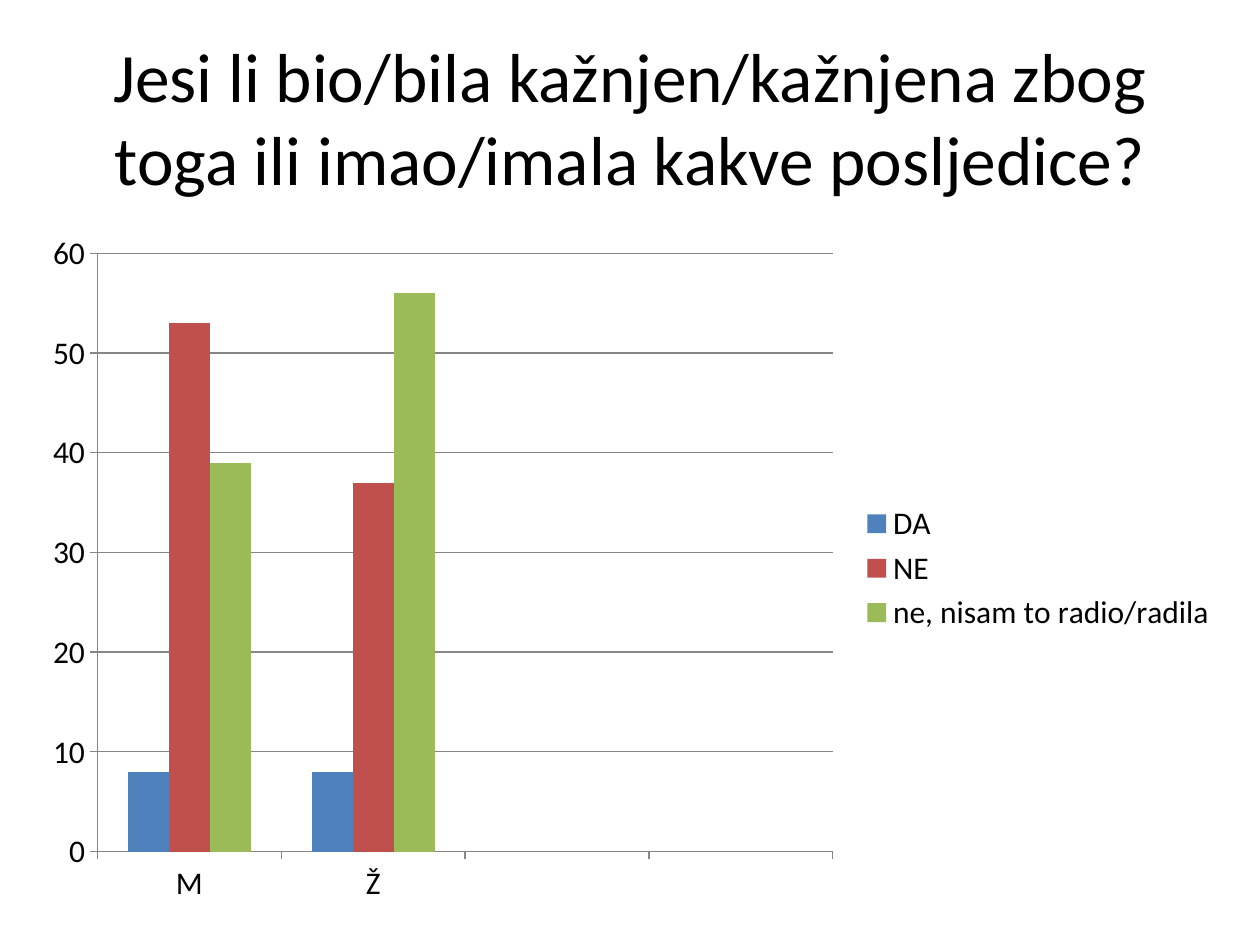
from pptx import Presentation
from pptx.chart.data import CategoryChartData
from pptx.dml.color import RGBColor
from pptx.enum.chart import XL_CHART_TYPE, XL_LEGEND_POSITION, XL_TICK_MARK
from pptx.enum.text import MSO_ANCHOR, PP_ALIGN
from pptx.util import Inches, Pt

COLUMNS = XL_CHART_TYPE.COLUMN_CLUSTERED
LEGEND_RIGHT = XL_LEGEND_POSITION.RIGHT
TICK_OUT = XL_TICK_MARK.OUTSIDE
MIDDLE, CENTER = MSO_ANCHOR.MIDDLE, PP_ALIGN.CENTER

TITLE = "Jesi li bio/bila kažnjen/kažnjena zbog toga ili imao/imala kakve posljedice?"
CATEGORIES = ["M", "Ž", "", ""]
SERIES = [
    ("DA", [8, 8, None, None], "4F81BD"),
    ("NE", [53, 37, None, None], "C0504D"),
    ("ne, nisam to radio/radila", [39, 56, None, None], "9BBB59"),
]
THEME = {"font": "Calibri", "title": 39.6, "chart": 18,
         "text": "000000", "line": "868686"}
SLIDE = (10, 7.5)
TITLE_BOX = (0.5, 0.3, 9, 1.25)
CHART_BOX = (0.23, 1.75, 9.53, 5.52)


def style(font, size):
    font.name = THEME["font"]
    font.size = Pt(size)
    font.color.rgb = RGBColor.from_string(THEME["text"])


def rule(line):
    line.color.rgb = RGBColor.from_string(THEME["line"])
    line.width = Pt(0.75)


def add_title(s):
    tf = s.shapes.add_textbox(*map(Inches, TITLE_BOX)).text_frame
    tf.word_wrap = True
    tf.vertical_anchor = MIDDLE
    p = tf.paragraphs[0]
    p.text = TITLE
    p.alignment = CENTER
    style(p.font, THEME["title"])


def add_answers_chart(s):
    data = CategoryChartData()
    data.categories = CATEGORIES
    for name, values, _ in SERIES:
        data.add_series(name, values)
    chart = s.shapes.add_chart(COLUMNS, *map(Inches, CHART_BOX), data).chart
    style(chart.font, THEME["chart"])
    chart.has_title = False
    chart.has_legend = True
    chart.legend.position = LEGEND_RIGHT
    chart.legend.include_in_layout = False

    plot = chart.plots[0]
    plot.vary_by_categories = False
    plot.gap_width = 150
    plot.overlap = 0
    for series, (_, _, color) in zip(plot.series, SERIES):
        series.format.fill.solid()
        series.format.fill.fore_color.rgb = RGBColor.from_string(color)

    for axis in (chart.category_axis, chart.value_axis):
        axis.major_tick_mark = TICK_OUT
        rule(axis.format.line)
    y = chart.value_axis
    y.minimum_scale, y.maximum_scale, y.major_unit = 0, 60, 10
    y.tick_labels.number_format = "0"
    y.tick_labels.number_format_is_linked = False
    y.has_major_gridlines = True
    rule(y.major_gridlines.format.line)


def main():
    prs = Presentation()
    prs.slide_width, prs.slide_height = map(Inches, SLIDE)
    s = prs.slides.add_slide(prs.slide_layouts[6])
    add_title(s)
    add_answers_chart(s)
    prs.save("out.pptx")


if __name__ == "__main__":
    main()
